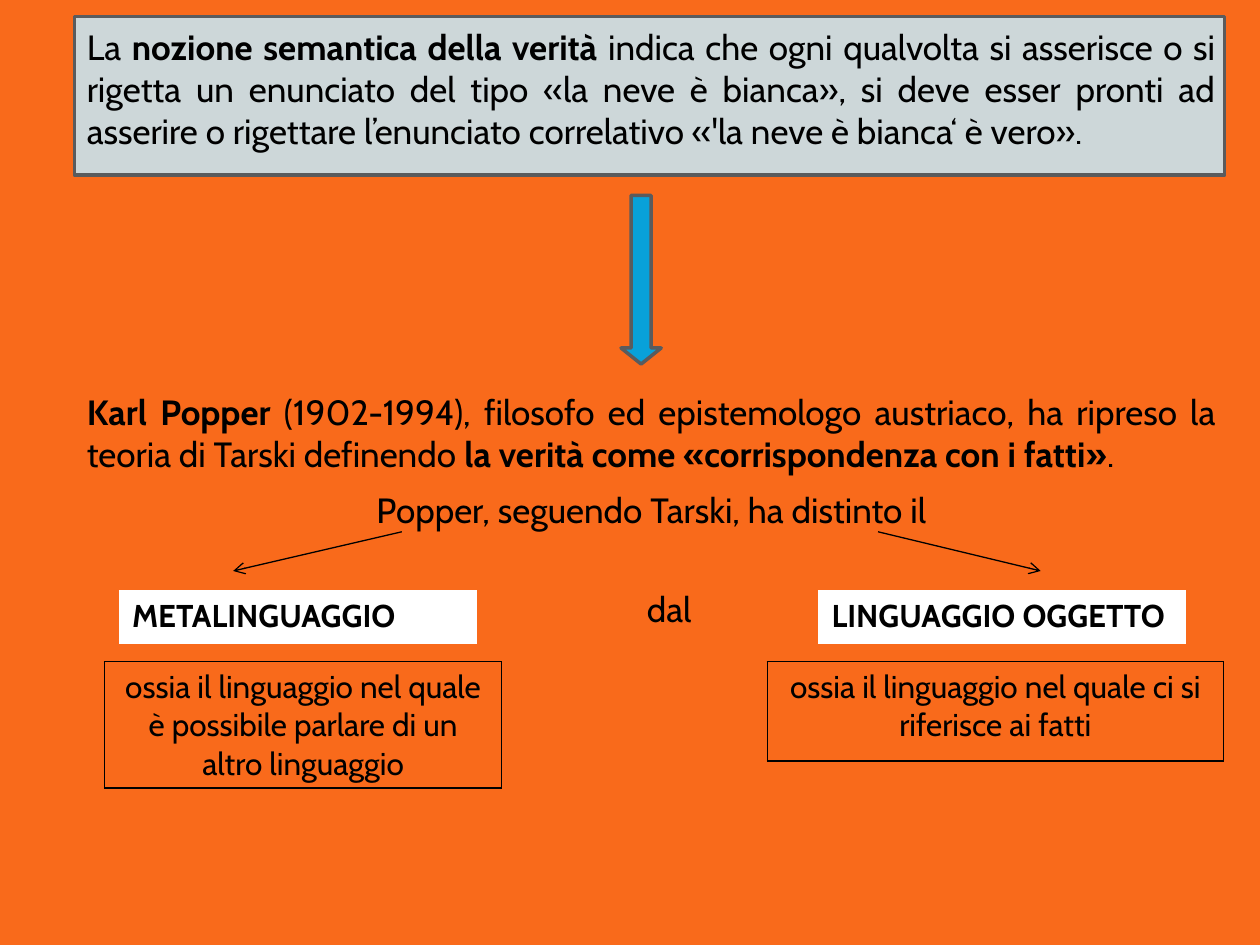
from dataclasses import dataclass

from lxml.etree import SubElement
from pptx import Presentation
from pptx.dml.color import RGBColor
from pptx.enum.shapes import MSO_CONNECTOR, MSO_SHAPE
from pptx.enum.text import MSO_ANCHOR, PP_ALIGN
from pptx.oxml import parse_xml
from pptx.oxml.ns import nsdecls, qn
from pptx.util import Cm, Pt


@dataclass(frozen=True)
class Theme:
    font: str = "Cabin"
    body: int = 20
    label: int = 18
    orange: str = "F96A1B"
    grey: str = "CDD7D9"
    outline: str = "5A5B5D"
    blue: str = "08A1D9"
    black: str = "000000"
    white: str = "FFFFFF"


THEME = Theme()

# Each run is (text, bold)
DEFINITION = [
    ("La ", False),
    ("nozione semantica della verità ", True),
    ("indica che ogni qualvolta si asserisce o si rigetta un enunciato del tipo "
     "«la neve è bianca», si deve esser pronti ad asserire o rigettare "
     "l’enunciato correlativo «'la neve è bianca‘ è vero».", False),
]
POPPER = [
    ("Karl Popper ", True),
    ("(1902-1994), filosofo ed epistemologo austriaco, ha ripreso la teoria di "
     "Tarski definendo ", False),
    ("la verità come «corrispondenza con i fatti»", True),
    (".", False),
]
DISTINCTION = [("Popper, seguendo Tarski, ha distinto il", False)]
JOINING_WORD = [("dal", False)]

# Boxes are (left, width) and (left, width, height); pointers are (from x, to x), in cm
LANGUAGES = [
    {"name": "METALINGUAGGIO", "name_box": (2.41, 7.19),
     "meaning": "ossia il linguaggio nel quale è possibile parlare di un altro linguaggio",
     "meaning_box": (2.11, 8, 2.39), "pointer": (8.1, 4.7)},
    {"name": "LINGUAGGIO OGGETTO", "name_box": (16.51, 7.39),
     "meaning": "ossia il linguaggio nel quale ci si riferisce ai fatti",
     "meaning_box": (15.47, 9.19, 2), "pointer": (17.7, 20.98)},
]
POINTER_TOP, POINTER_BOTTOM = 10.72, 11.51
NAME_TOP, NAME_HEIGHT = 11.91, 1
MEANING_TOP = 13.34


def colour(code):
    return RGBColor.from_string(code)


def write(paragraph, runs, size=THEME.body, align=PP_ALIGN.LEFT, before=0):
    paragraph.alignment = align
    paragraph.space_before = Pt(before)
    for text, bold in runs:
        run = paragraph.add_run()
        run.text = text
        run.font.name = THEME.font
        run.font.size = Pt(size)
        run.font.bold = bold
        run.font.color.rgb = colour(THEME.black)


def add_outlined(slide, preset, box, fill):
    shape = slide.shapes.add_shape(preset, *map(Cm, box))
    shape.shadow.inherit = False
    shape.fill.solid()
    shape.fill.fore_color.rgb = colour(fill)
    shape.line.color.rgb = colour(THEME.outline)
    shape.line.width = Pt(2)
    return shape


def add_text_frame(slide, box):
    frame = slide.shapes.add_textbox(*map(Cm, box)).text_frame
    frame.word_wrap = True
    return frame


def add_pointer(slide, start_x, end_x):
    pointer = slide.shapes.add_connector(
        MSO_CONNECTOR.STRAIGHT,
        Cm(start_x), Cm(POINTER_TOP), Cm(end_x), Cm(POINTER_BOTTOM))
    pointer.line.color.rgb = colour(THEME.black)
    pointer.line.width = Pt(0.75)
    SubElement(pointer.line._get_or_add_ln(), qn("a:tailEnd"), type="arrow")
    SubElement(pointer._element.spPr, qn("a:effectLst"))


def add_cell_table(slide, box, text, border, fill=None, bottom=1, bold=False,
                   align=PP_ALIGN.LEFT):
    """Add a one-cell table; border widths are 1 pt except the bottom one."""
    table = slide.shapes.add_table(1, 1, *map(Cm, box)).table
    table.first_row = table.horz_banding = False
    cell = table.cell(0, 0)
    if fill:
        cell.fill.solid()
        cell.fill.fore_color.rgb = colour(fill)
    else:
        cell.fill.background()
    sides = (("L", 1), ("R", 1), ("T", 1), ("B", bottom))
    for position, (side, width) in enumerate(sides):
        cell._tc.get_or_add_tcPr().insert(position, parse_xml(
            f'<a:ln{side} {nsdecls("a")} w="{Pt(width)}"><a:solidFill>'
            f'<a:srgbClr val="{border}"/></a:solidFill></a:ln{side}>'))
    write(cell.text_frame.paragraphs[0], [(text, bold)], size=THEME.label, align=align)


def main():
    deck = Presentation()
    deck.slide_width, deck.slide_height = Cm(25.4), Cm(19.05)
    slide = deck.slides.add_slide(deck.slide_layouts[6])
    slide.background.fill.solid()
    slide.background.fill.fore_color.rgb = colour(THEME.orange)

    definition = add_outlined(
        slide, MSO_SHAPE.RECTANGLE, (1.5, 0.33, 23.19, 3.2), THEME.grey).text_frame
    definition.word_wrap = True
    definition.vertical_anchor = MSO_ANCHOR.TOP
    definition.margin_top = definition.margin_right = Cm(0.18)
    write(definition.paragraphs[0], DEFINITION, align=PP_ALIGN.JUSTIFY)

    arrow = add_outlined(
        slide, MSO_SHAPE.DOWN_ARROW, (12.52, 3.94, 0.81, 3.4), THEME.blue)
    arrow.adjustments[0], arrow.adjustments[1] = 0.5, 0.4

    popper = add_text_frame(slide, (1.5, 7.75, 23.27, 3.2))
    write(popper.paragraphs[0], POPPER, align=PP_ALIGN.JUSTIFY)
    write(popper.add_paragraph(), DISTINCTION, align=PP_ALIGN.CENTER, before=8)
    joining = add_text_frame(slide, (12.49, 11.71, 2, 1.1))
    write(joining.paragraphs[0], JOINING_WORD, align=PP_ALIGN.CENTER)

    for language in LANGUAGES:
        add_pointer(slide, *language["pointer"])
        left, width = language["name_box"]
        add_cell_table(slide, (left, NAME_TOP, width, NAME_HEIGHT), language["name"],
                       THEME.white, fill=THEME.white, bottom=3, bold=True)
        left, width, height = language["meaning_box"]
        add_cell_table(slide, (left, MEANING_TOP, width, height), language["meaning"],
                       THEME.black, align=PP_ALIGN.CENTER)

    deck.save("out.pptx")


if __name__ == "__main__":
    main()
